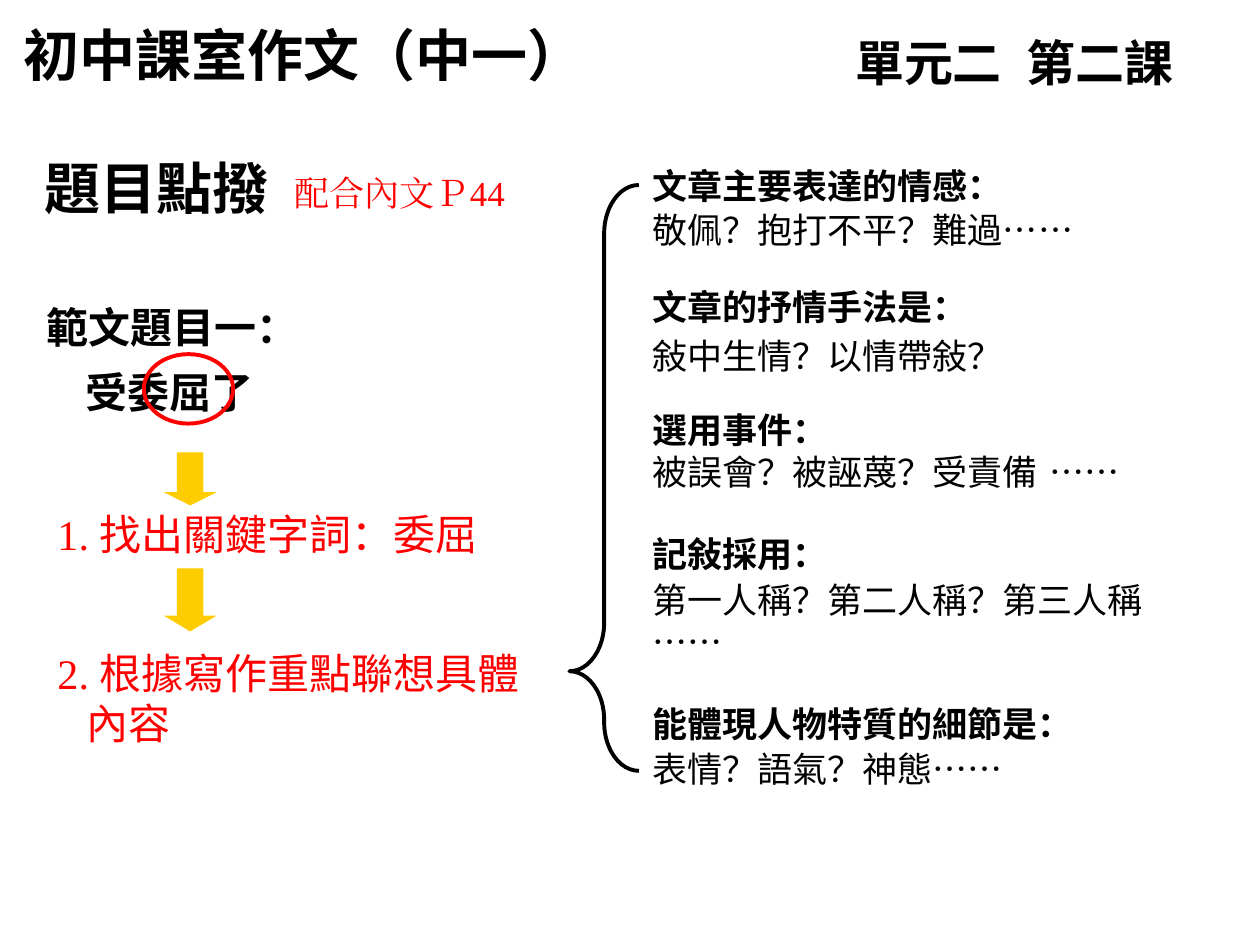
from dataclasses import dataclass

from pptx import Presentation
from pptx.dml.color import RGBColor
from pptx.enum.shapes import MSO_SHAPE
from pptx.oxml.ns import qn
from pptx.util import Cm, Pt


@dataclass(frozen=True)
class Theme:
    black: RGBColor = RGBColor(0, 0, 0)
    red: RGBColor = RGBColor(255, 0, 0)
    yellow: RGBColor = RGBColor(255, 204, 0)
    title: int = 32
    unit: int = 28
    step: int = 24
    body: int = 20
    outline: float = 2.25
    title_font: str = "Karla"
    heading_font: str = "Arial"
    body_font: str = "DejaVu Sans"
    number_font: str = "Times New Roman"
    ellipsis_font: str = "Noto Sans CJK SC"


class SlideBuilder:
    def __init__(self, slide, theme):
        self.slide = slide
        self.theme = theme

    def text_box(self, left, top, width, height):
        shape = self.slide.shapes.add_textbox(Cm(left), Cm(top), Cm(width), Cm(height))
        shape.text_frame.word_wrap = True
        return shape.text_frame

    def paragraph(self, frame, runs, size, color=None, bold=False, indent=0, **spacing):
        """Add a paragraph; runs are (text, font name) pairs."""
        first = frame.paragraphs[0]
        paragraph = frame.add_paragraph() if first.runs else first
        if indent:
            paragraph._p.get_or_add_pPr().set("marL", str(Cm(indent)))
        for name, value in spacing.items():
            setattr(paragraph, name, value)
        for text, font_name in runs:
            run = paragraph.add_run()
            run.text = text
            values = {"name": font_name, "size": Pt(size), "bold": bold}
            for name, value in values.items():
                setattr(run.font, name, value)
            run.font.color.rgb = color or self.theme.black
            properties = run._r.get_or_add_rPr()
            east_asian = properties.makeelement(qn("a:ea"), {"typeface": font_name})
            properties.append(east_asian)

    def label(self, place, text, font_name, size, color=None, bold=True):
        self.paragraph(self.text_box(*place), [(text, font_name)], size, color, bold)

    def shape(self, kind, place, fill=None, line=None, adjustments=()):
        shape = self.slide.shapes.add_shape(kind, *map(Cm, place))
        shape.shadow.inherit = False
        for index, value in enumerate(adjustments):
            shape.adjustments[index] = value
        if fill is None:
            shape.fill.background()
        else:
            shape.fill.solid()
            shape.fill.fore_color.rgb = fill
        if line is None:
            shape.line.fill.background()
        else:
            shape.line.color.rgb = line
            shape.line.width = Pt(self.theme.outline)

    def step(self, place, number, text, continuation=None):
        theme = self.theme
        frame = self.text_box(*place)
        runs = [(f"{number}. ", theme.number_font), (text, theme.body_font)]
        self.paragraph(frame, runs, theme.step, theme.red)
        if continuation:
            runs = [(continuation, theme.body_font)]
            self.paragraph(frame, runs, theme.step, theme.red, indent=0.58)

    def questions(self, place, entries):
        """Each entry: heading, answer, ellipsis, space before each of the two."""
        theme = self.theme
        frame = self.text_box(*place)
        for heading, answer, ellipsis, heading_gap, answer_gap in entries:
            self.paragraph(frame, [(heading, theme.heading_font)], theme.body, bold=True,
                           line_spacing=Pt(24), space_before=Pt(heading_gap))
            runs = [(answer, theme.body_font)]
            if ellipsis:
                runs.append((ellipsis, theme.ellipsis_font))
            self.paragraph(frame, runs, theme.body,
                           line_spacing=Pt(24), space_before=Pt(answer_gap))


def main():
    presentation = Presentation()
    presentation.slide_width, presentation.slide_height = Cm(25.4), Cm(19.05)
    theme = Theme()
    slide = presentation.slides.add_slide(presentation.slide_layouts[6])
    builder = SlideBuilder(slide, theme)

    # Header and section heading
    builder.label((0.23, 0.28, 13.26, 1.6), "初中課室作文（中一）", theme.title_font, theme.title)
    builder.label((16.99, 0.53, 8.4, 1.45), "單元二  第二課", theme.title_font, theme.unit)
    builder.label((0.64, 2.97, 7.82, 1.6), "題目點撥", theme.heading_font, theme.title)
    builder.label((5.69, 3.33, 6.27, 1.09), "配合內文Ｐ44", theme.number_font, theme.body,
                  theme.red, bold=False)

    # Essay topic with its key word circled
    topic = builder.text_box(0.69, 5.64, 12.7, 2.9)
    for text, indent in (("範文題目一：", 0), ("受委屈了", 0.79)):
        builder.paragraph(topic, [(text, theme.body_font)], theme.step, bold=True,
                          indent=indent, line_spacing=1.3)
    builder.shape(MSO_SHAPE.OVAL, (2.9, 7.14, 1.8, 1.4), line=theme.red)

    # Steps, each below an arrow
    for top, height, head in ((9.12, 1.07, 0.25), (11.46, 1.27, 0.3)):
        builder.shape(MSO_SHAPE.DOWN_ARROW, (3.3, top, 1.07, height), fill=theme.yellow,
                      adjustments=(0.5, head))
    builder.step((0.91, 10.13, 11, 1.27), 1, "找出關鍵字詞：委屈")
    builder.step((0.91, 12.93, 10.59, 2.29), 2, "根據寫作重點聯想具體", "內容")

    # Guiding questions gathered by a brace
    builder.shape(MSO_SHAPE.LEFT_BRACE, (11.48, 3.73, 1.4, 11.81), line=theme.black,
                  adjustments=(0.7, 0.83))
    builder.questions((12.9, 3.2, 10.59, 13.6), (
        ("文章主要表達的情感：", "敬佩？抱打不平？難過", "……", 0, 1),
        ("文章的抒情手法是：", "敍中生情？以情帶敍？", "", 20, 4),
        ("選用事件：", "被誤會？被誣蔑？受責備 ", "……", 18, 0),
        ("記敍採用：", "第一人稱？第二人稱？第三人稱 ", "……", 23, 2),
        ("能體現人物特質的細節是：", "表情？語氣？神態", "……", 23, 2),
    ))

    presentation.save("out.pptx")


if __name__ == "__main__":
    main()
